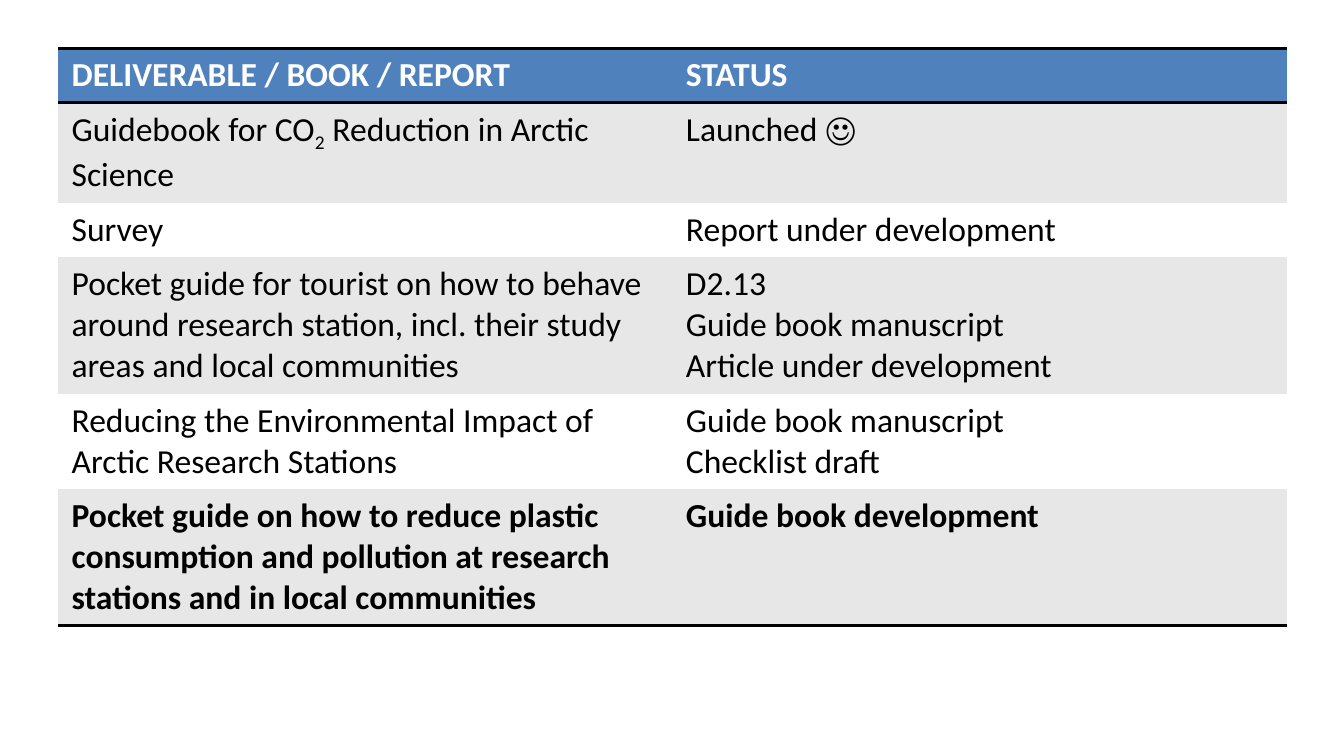
from lxml import etree
from pptx import Presentation
from pptx.dml.color import RGBColor
from pptx.oxml.ns import qn
from pptx.util import Cm, Pt

BLUE = RGBColor(0x4F, 0x81, 0xBD)
GREY = RGBColor(0xE7, 0xE7, 0xE7)
WHITE = RGBColor(0xFF, 0xFF, 0xFF)
BLACK = RGBColor(0x00, 0x00, 0x00)
PLAIN_STYLE = "{2D5ABB26-0587-4C30-8999-92F81FD0307C}"

# Each cell is a list of paragraphs; text between ~ marks is subscript.
DELIVERABLES = [
    (["DELIVERABLE / BOOK / REPORT"], ["STATUS"]),
    (["Guidebook for CO~2~ Reduction in Arctic Science"], ["Launched ☺"]),
    (["Survey"], ["Report under development"]),
    (["Pocket guide for tourist on how to behave around research station, "
      "incl. their study areas and local communities"],
     ["D2.13", "Guide book manuscript", "Article under development"]),
    (["Reducing the Environmental Impact of Arctic Research Stations"],
     ["Guide book manuscript", "Checklist draft"]),
    (["Pocket guide on how to reduce plastic consumption and pollution at "
      "research stations and in local communities"],
     ["Guide book development"]),
]


def write(frame, paragraphs, color=BLACK, bold=False, size=18, font="Calibri"):
    for index, text in enumerate(paragraphs):
        paragraph = frame.paragraphs[0] if index == 0 else frame.add_paragraph()
        for part, words in enumerate(text.split("~")):
            run = paragraph.add_run()
            run.text = words
            run.font.name = font
            run.font.size = Pt(size)
            run.font.bold = bold
            run.font.color.rgb = color
            if part % 2:
                run.font._element.set("baseline", "-25000")


def add_rule(cell, side):
    """Draw a black 2 pt border on one side, "lnT" or "lnB", of a cell."""
    border = etree.SubElement(cell._tc.get_or_add_tcPr(), qn(f"a:{side}"), w=str(Pt(2)))
    fill = etree.SubElement(border, qn("a:solidFill"))
    etree.SubElement(fill, qn("a:srgbClr"), val=str(BLACK))


prs = Presentation()
prs.slide_width = Cm(25.4)
prs.slide_height = Cm(14.29)
slide = prs.slides.add_slide(prs.slide_layouts[6])

last = len(DELIVERABLES) - 1
row_height = Cm(1.03)
table = slide.shapes.add_table(
    len(DELIVERABLES), 2, Cm(1.1), Cm(0.91), Cm(23.22), row_height * len(DELIVERABLES)
).table
table.horz_banding = False
table._tbl.tblPr.find(qn("a:tableStyleId")).text = PLAIN_STYLE

for row, entries in enumerate(DELIVERABLES):
    # Rows grow from this minimum to hold their text.
    table.rows[row].height = row_height
    header = row == 0
    for column, paragraphs in enumerate(entries):
        cell = table.cell(row, column)
        if header:
            add_rule(cell, "lnT")
        if row in (0, last):
            add_rule(cell, "lnB")
        cell.fill.solid()
        cell.fill.fore_color.rgb = BLUE if header else GREY if row % 2 else WHITE
        write(cell.text_frame, paragraphs,
              color=WHITE if header else BLACK, bold=row in (0, last))

prs.save("out.pptx")
